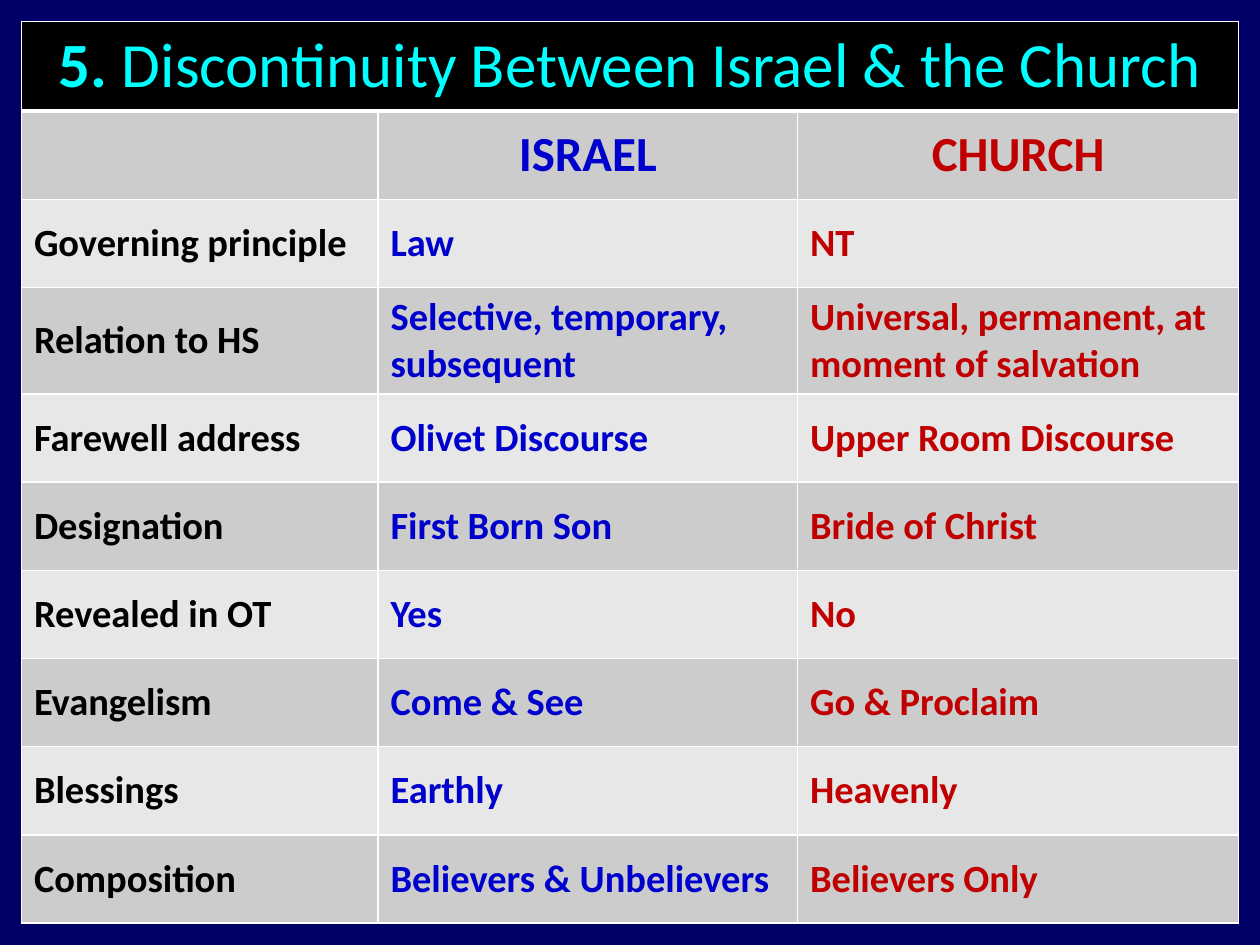
from typing import NamedTuple

from lxml import etree
from pptx import Presentation
from pptx import util as u
from pptx.dml.color import RGBColor
from pptx.enum import text
from pptx.oxml import ns

COLORS = {
    "background": "000066", "title_fill": "000000", "title": "00FFFF",
    "dark_band": "CCCCCC", "light_band": "E7E7E7", "border": "FFFFFF",
    "topic": "000000", "israel": "0000CC", "church": "C00000",
}
COLUMN_COLORS = ("topic", "israel", "church")
COLUMN_WIDTHS = (2.83, 3.33, 3.5)
ROW_HEIGHT = 0.7
TITLE_RULE = 3


class Run(NamedTuple):
    """A stretch of text with one style."""
    wording: str
    color: str
    size: int
    bold: bool = True


class Contrast(NamedTuple):
    """One row setting Israel against the Church."""
    topic: str
    israel: str
    church: str


HEADINGS = Contrast("", "ISRAEL", "CHURCH")
CONTRASTS = (
    Contrast("Governing principle", "Law", "NT"),
    Contrast("Relation to HS", "Selective, temporary, subsequent",
             "Universal, permanent, at moment of salvation"),
    Contrast("Farewell address", "Olivet Discourse", "Upper Room Discourse"),
    Contrast("Designation", "First Born Son", "Bride of Christ"),
    Contrast("Revealed in OT", "Yes", "No"),
    Contrast("Evangelism", "Come & See", "Go & Proclaim"),
    Contrast("Blessings", "Earthly", "Heavenly"),
    Contrast("Composition", "Believers & Unbelievers", "Believers Only"),
)
TITLE = (
    Run("5. ", "title", 36),
    Run("Discontinuity Between Israel & the Church", "title", 36, False),
)


def rgb(name: str) -> RGBColor:
    """Look up a named colour."""
    return RGBColor.from_string(COLORS[name])


def draw_borders(cell, top: float = 1, bottom: float = 1) -> None:
    """Outline a cell, with widths in points."""
    properties = cell._tc.get_or_add_tcPr()
    for place, (side, width) in enumerate((("L", 1), ("R", 1), ("T", top), ("B", bottom))):
        line = etree.Element(ns.qn(f"a:ln{side}"), w=str(u.Pt(width)))
        paint = etree.SubElement(line, ns.qn("a:solidFill"))
        etree.SubElement(paint, ns.qn("a:srgbClr"), val=COLORS["border"])
        properties.insert(place, line)


def fill_cell(cell, band: str, runs: tuple[Run, ...], centered: bool) -> None:
    """Colour a cell and write its runs."""
    cell.fill.solid()
    cell.fill.fore_color.rgb = rgb(band)
    cell.vertical_anchor = text.MSO_ANCHOR.MIDDLE
    paragraph = cell.text_frame.paragraphs[0]
    paragraph.alignment = text.PP_ALIGN.CENTER if centered else text.PP_ALIGN.LEFT
    for part in runs:
        run = paragraph.add_run()
        run.text = part.wording
        run.font.name = "Calibri"
        run.font.size = u.Pt(part.size)
        run.font.bold = part.bold
        run.font.color.rgb = rgb(part.color)


def draw_contrast(table, row: int, contrast: Contrast) -> None:
    """Write one row of the comparison in its band."""
    heading = contrast is HEADINGS
    band = "dark_band" if row % 2 else "light_band"
    for column, (wording, color) in enumerate(zip(contrast, COLUMN_COLORS)):
        cell = table.cell(row, column)
        runs = (Run(wording, color, 28 if heading else 22),) if wording else ()
        fill_cell(cell, band, runs, heading)
        draw_borders(cell, top=TITLE_RULE if heading else 1)


def main() -> None:
    """Build the slide comparing Israel and the Church."""
    deck = Presentation()
    deck.slide_width, deck.slide_height = u.Inches(10), u.Inches(7.5)
    slide = deck.slides.add_slide(deck.slide_layouts[6])
    slide.background.fill.solid()
    slide.background.fill.fore_color.rgb = rgb("background")

    row_count = len(CONTRASTS) + 2
    table = slide.shapes.add_table(
        row_count, len(COLUMN_WIDTHS), u.Inches(0.17), u.Inches(0.17),
        u.Inches(sum(COLUMN_WIDTHS)), u.Inches(ROW_HEIGHT * row_count)).table
    for column, width in zip(table.columns, COLUMN_WIDTHS):
        column.width = u.Inches(width)

    title = table.cell(0, 0)
    title.merge(table.cell(0, len(COLUMN_WIDTHS) - 1))
    fill_cell(title, "title_fill", TITLE, True)
    for cell in table.rows[0].cells:
        draw_borders(cell, bottom=TITLE_RULE)
    for row, contrast in enumerate((HEADINGS, *CONTRASTS), start=1):
        draw_contrast(table, row, contrast)

    deck.save("out.pptx")


if __name__ == "__main__":
    main()
